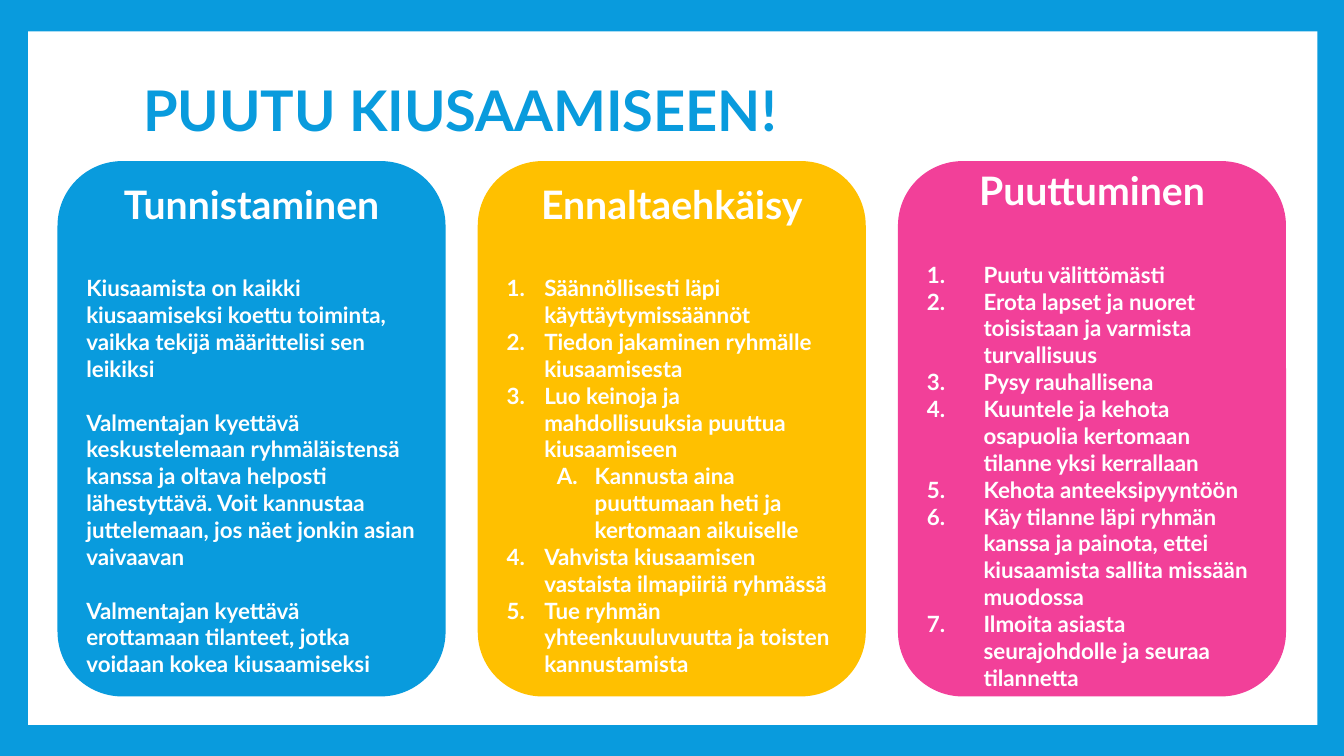
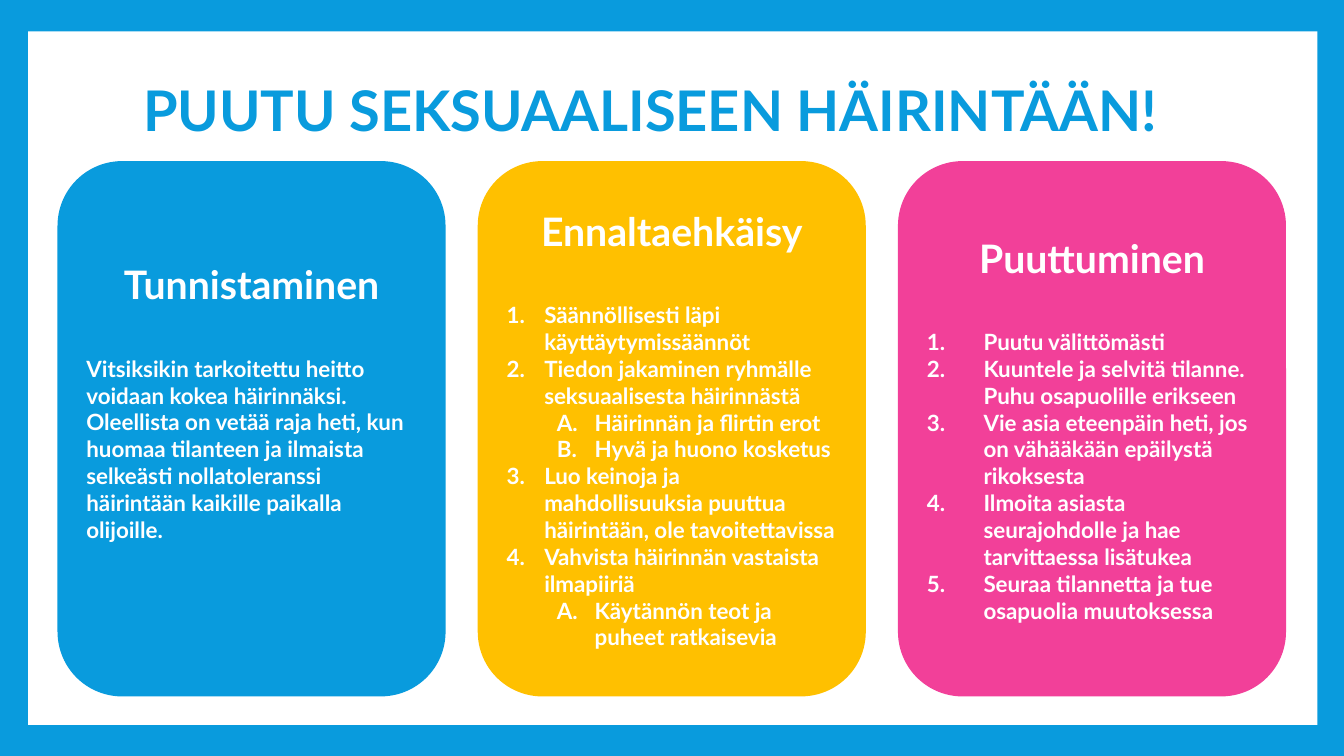
"""Build two slides of three cards each on bullying and harassment in sport."""

from dataclasses import dataclass

from lxml import etree
from pptx import Presentation
from pptx.dml.color import RGBColor
from pptx.enum.shapes import MSO_SHAPE
from pptx.enum.text import MSO_ANCHOR, PP_ALIGN
from pptx.oxml.ns import qn
from pptx.slide import Slide
from pptx.text.text import _Paragraph
from pptx.util import Cm, Pt

BLUE = RGBColor(0x09, 0x9B, 0xDD)
YELLOW = RGBColor(0xFF, 0xC0, 0x00)
PINK = RGBColor(0xF2, 0x40, 0x99)
WHITE = RGBColor(0xFF, 0xFF, 0xFF)

RECT, ROUND_RECT = MSO_SHAPE.RECTANGLE, MSO_SHAPE.ROUNDED_RECTANGLE
LEFT, CENTER = PP_ALIGN.LEFT, PP_ALIGN.CENTER
MIDDLE = MSO_ANCHOR.MIDDLE

FONT = "Lato"
TITLE_SIZE, HEADING_SIZE, BODY_SIZE = 40, 28, 16
LINE_HEIGHT = 1.2
CARD_LEFT, CARD_TOP, CARD_WIDTH, CARD_HEIGHT = 1.45, 4.06, 9.78, 13.49
CARD_PITCH = 10.59
SUB_INDENT = 1.27
PANEL_ID = "20"


@dataclass(frozen=True)
class Column:
    """Heading, colour and number indent of one card column."""

    heading: str
    fill: RGBColor
    hanging: float = 0


@dataclass(frozen=True)
class Entry:
    """One paragraph of a card with its list level."""

    text: str
    level: int = 0


@dataclass(frozen=True)
class Body:
    """Paragraphs of a card and the free lines kept below them."""

    entries: tuple[Entry, ...]
    spare_lines: int = 0


@dataclass(frozen=True)
class Topic:
    """Title and card bodies of one slide."""

    title: str
    bodies: tuple[Body, ...]


COLUMNS = (
    Column("Tunnistaminen", BLUE),
    Column("Ennaltaehkäisy", YELLOW, 0.95),
    Column("Puuttuminen", PINK, 1.43),
)

TOPICS = (
    Topic("PUUTU KIUSAAMISEEN!", (
        Body((
            Entry("Kiusaamista on kaikki kiusaamiseksi koettu toiminta, vaikka tekijä "
                  "määrittelisi sen leikiksi"),
            Entry("Valmentajan kyettävä keskustelemaan ryhmäläistensä kanssa ja oltava "
                  "helposti lähestyttävä. Voit kannustaa juttelemaan, jos näet jonkin "
                  "asian vaivaavan"),
            Entry("Valmentajan kyettävä erottamaan tilanteet, jotka voidaan kokea "
                  "kiusaamiseksi"),
        )),
        Body((
            Entry("Säännöllisesti läpi käyttäytymissäännöt"),
            Entry("Tiedon jakaminen ryhmälle kiusaamisesta"),
            Entry("Luo keinoja ja mahdollisuuksia puuttua kiusaamiseen"),
            Entry("Kannusta aina puuttumaan heti ja kertomaan aikuiselle", 1),
            Entry("Vahvista kiusaamisen vastaista ilmapiiriä ryhmässä"),
            Entry("Tue ryhmän yhteenkuuluvuutta ja toisten kannustamista"),
        )),
        Body((
            Entry("Puutu välittömästi"),
            Entry("Erota lapset ja nuoret toisistaan ja varmista turvallisuus"),
            Entry("Pysy rauhallisena"),
            Entry("Kuuntele ja kehota osapuolia kertomaan tilanne yksi kerrallaan"),
            Entry("Kehota anteeksipyyntöön"),
            Entry("Käy tilanne läpi ryhmän kanssa ja painota, ettei kiusaamista sallita "
                  "missään muodossa"),
            Entry("Ilmoita asiasta seurajohdolle ja seuraa tilannetta"),
        )),
    )),
    Topic("PUUTU SEKSUAALISEEN HÄIRINTÄÄN!", (
        Body((
            Entry("Vitsiksikin tarkoitettu heitto voidaan kokea häirinnäksi. Oleellista on "
                  "vetää raja heti, kun huomaa tilanteen ja ilmaista selkeästi "
                  "nollatoleranssi häirintään kaikille paikalla olijoille."),
        ), spare_lines=2),
        Body((
            Entry("Säännöllisesti läpi käyttäytymissäännöt"),
            Entry("Tiedon jakaminen ryhmälle seksuaalisesta häirinnästä"),
            Entry("Häirinnän ja flirtin erot", 1),
            Entry("Hyvä ja huono kosketus", 1),
            Entry("Luo keinoja ja mahdollisuuksia puuttua häirintään, ole tavoitettavissa"),
            Entry("Vahvista häirinnän vastaista ilmapiiriä"),
            Entry("Käytännön teot ja puheet ratkaisevia", 1),
        )),
        Body((
            Entry("Puutu välittömästi"),
            Entry("Kuuntele ja selvitä tilanne. Puhu osapuolille erikseen"),
            Entry("Vie asia eteenpäin heti, jos on vähääkään epäilystä rikoksesta"),
            Entry("Ilmoita asiasta seurajohdolle ja hae tarvittaessa lisätukea"),
            Entry("Seuraa tilannetta ja tue osapuolia muutoksessa"),
        )),
    )),
)


def add_text(p: _Paragraph, text: str, size: int, color: RGBColor) -> None:
    """Add one bold run to a paragraph."""
    r = p.add_run()
    r.text = text
    r.font.name = FONT
    r.font.size = Pt(size)
    r.font.bold = True
    r.font.color.rgb = color


def number(p: _Paragraph, hanging: float, level: int) -> None:
    """Number a paragraph with digits, or with letters on the second level."""
    p.level = level
    pPr = p._p.get_or_add_pPr()
    pPr.set("marL", str(Cm(hanging + level * SUB_INDENT)))
    pPr.set("indent", str(-Cm(hanging)))
    etree.SubElement(pPr, qn("a:buFont"), typeface="+mj-lt")
    style = "alphaUcPeriod" if level else "arabicPeriod"
    etree.SubElement(pPr, qn("a:buAutoNum"), type=style)


def add_block(slide: Slide, kind: MSO_SHAPE, box: tuple[float, ...], fill: RGBColor):
    """Add a filled shape without line or shadow."""
    sp = slide.shapes.add_shape(kind, *(Cm(v) for v in box))
    sp.shadow.inherit = False
    sp.fill.solid()
    sp.fill.fore_color.rgb = fill
    sp.line.fill.background()
    return sp


def add_card(slide: Slide, left: float, column: Column, body: Body) -> None:
    """Draw one rounded card with its heading and paragraphs."""
    box = (left, CARD_TOP, CARD_WIDTH, CARD_HEIGHT)
    tf = add_block(slide, ROUND_RECT, box, column.fill).text_frame
    tf.word_wrap = True
    tf.vertical_anchor = MIDDLE
    tf.margin_bottom += Pt(body.spare_lines * BODY_SIZE * LINE_HEIGHT)
    p = tf.paragraphs[0]
    p.alignment = CENTER
    p.space_after = Pt(HEADING_SIZE * LINE_HEIGHT)
    add_text(p, column.heading, HEADING_SIZE, WHITE)
    for i, entry in enumerate(body.entries):
        p = tf.add_paragraph()
        p.alignment = LEFT
        if column.hanging:
            number(p, column.hanging, entry.level)
        elif i:
            p.space_before = Pt(BODY_SIZE * LINE_HEIGHT)
        add_text(p, entry.text, BODY_SIZE, WHITE)


def add_topic(slide: Slide, topic: Topic) -> None:
    """Fill one slide with its title and cards."""
    tf = slide.shapes.title.text_frame
    tf.vertical_anchor = MIDDLE
    p = tf.paragraphs[0]
    p.alignment = LEFT
    p.line_spacing = 0.85
    add_text(p, topic.title, TITLE_SIZE, BLUE)
    for i, (column, body) in enumerate(zip(COLUMNS, topic.bodies)):
        add_card(slide, CARD_LEFT + i * CARD_PITCH, column, body)


def main() -> None:
    """Set up the master and build the slides."""
    prs = Presentation()
    prs.slide_width, prs.slide_height = Cm(33.87), Cm(19.05)
    master = prs.slide_master
    master.background.fill.solid()
    master.background.fill.fore_color.rgb = BLUE

    layout = prs.slide_layouts.get_by_name("Title Only")
    title = layout.placeholders[0]
    title.left, title.top = Cm(3.35), Cm(0.79)
    title.width, title.height = Cm(27.18), Cm(4.19)

    slides = [prs.slides.add_slide(layout) for _ in TOPICS]
    panel = add_block(slides[0], RECT, (0.71, 0.79, 32.49, 17.48), WHITE).element
    panel.nvSpPr.cNvPr.set("id", PANEL_ID)
    master.shapes.element.insert(2, panel)

    for slide, topic in zip(slides, TOPICS):
        add_topic(slide, topic)
    prs.save("out.pptx")


if __name__ == "__main__":
    main()
